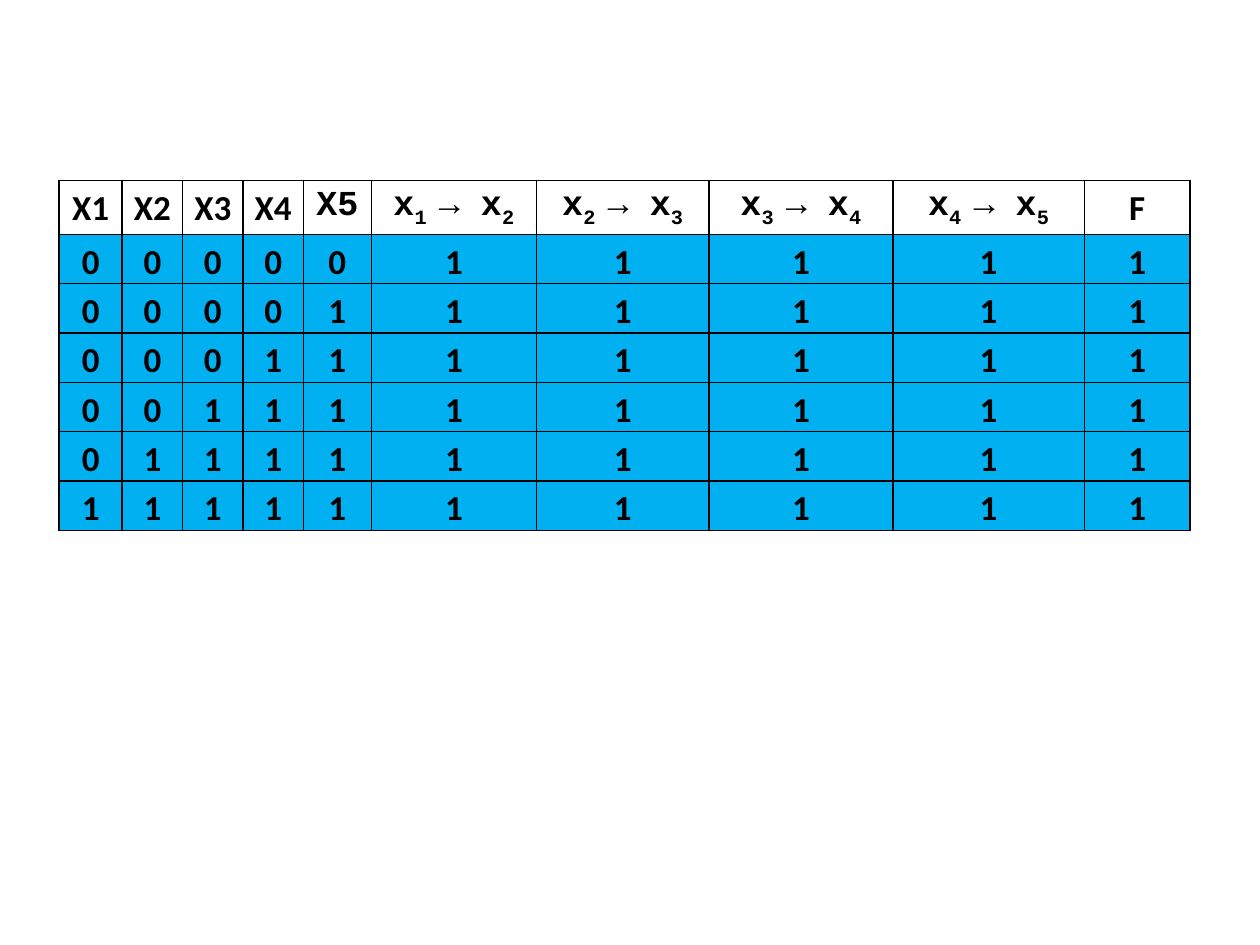
from lxml.etree import SubElement
from pptx import Presentation
from pptx.dml.color import RGBColor as RGB
from pptx.enum.text import MSO_ANCHOR as Anchor, PP_ALIGN as Align
from pptx.oxml.ns import qn
from pptx.util import Pt

COLORS = {"ink": "000000", "row": "00B0F0"}
SANS, MONO = "Calibri", "Courier New"
VARIABLES = 5
COL_WIDTHS = [36, 34.5, 34.5, 34.5, 38.9, 94.3, 98.6, 105.1, 109.4, 60.5]
ROW_HEIGHTS = [30.96] + [12.24] * (VARIABLES + 1)
LEFT, TOP, WIDTH, HEIGHT = 33.84, 103, 646.3, 196.56

names = [([(f"X{i}", 0)], MONO if i == VARIABLES else SANS)
         for i in range(1, VARIABLES + 1)]
implications = [([("x", 0), (f"{i} ", -25), ("→ x", 0), (f"{i + 1}", -25)], MONO)
                for i in range(1, VARIABLES)]
HEADER = names + implications + [([("F", 0)], SANS)]
ROWS = ["0" * (VARIABLES - ones) + "1" * (ones + VARIABLES)
        for ones in range(VARIABLES + 1)]


def write(cell, runs, font=SANS, size=20, color="ink", bold=True):
    p = cell.text_frame.paragraphs[0]
    p.alignment, p.line_spacing = Align.CENTER, 1.15
    for text, baseline in runs:
        r = p.add_run()
        r.text = text
        r.font.name, r.font.size, r.font.bold = font, Pt(size), bold
        r.font.color.rgb = RGB.from_string(COLORS[color])
        if baseline:
            r.font._element.set("baseline", str(baseline * 1000))


def format_cell(cell, fill=None):
    cell.margin_left = cell.margin_right = Pt(3.6)
    cell.margin_top = cell.margin_bottom = 0
    cell.vertical_anchor = Anchor.TOP
    props = cell._tc.get_or_add_tcPr()
    for side in ("a:lnL", "a:lnR", "a:lnT", "a:lnB"):
        line = SubElement(props, qn(side), w=str(Pt(1)))
        solid = SubElement(line, qn("a:solidFill"))
        SubElement(solid, qn("a:srgbClr"), val=COLORS["ink"])
    if fill:
        cell.fill.solid()
        cell.fill.fore_color.rgb = RGB.from_string(COLORS[fill])
    else:
        cell.fill.background()


prs = Presentation()
prs.slide_width, prs.slide_height = Pt(720), Pt(540)
s = prs.slides.add_slide(prs.slide_layouts[6])
frame = s.shapes.add_table(len(ROW_HEIGHTS), len(COL_WIDTHS),
                           Pt(LEFT), Pt(TOP), Pt(WIDTH), Pt(HEIGHT))
table = frame.table
table.first_row = table.horz_banding = False
for column, width in zip(table.columns, COL_WIDTHS):
    column.width = Pt(width)
for row, height in zip(table.rows, ROW_HEIGHTS):
    row.height = Pt(height)
frame.width, frame.height = Pt(WIDTH), Pt(HEIGHT)

for cell, (runs, font) in zip(table.rows[0].cells, HEADER):
    format_cell(cell)
    write(cell, runs, font=font)
for i, values in enumerate(ROWS, 1):
    for cell, value in zip(table.rows[i].cells, values):
        format_cell(cell, fill="row")
        write(cell, [(value, 0)])

prs.save("out.pptx")
